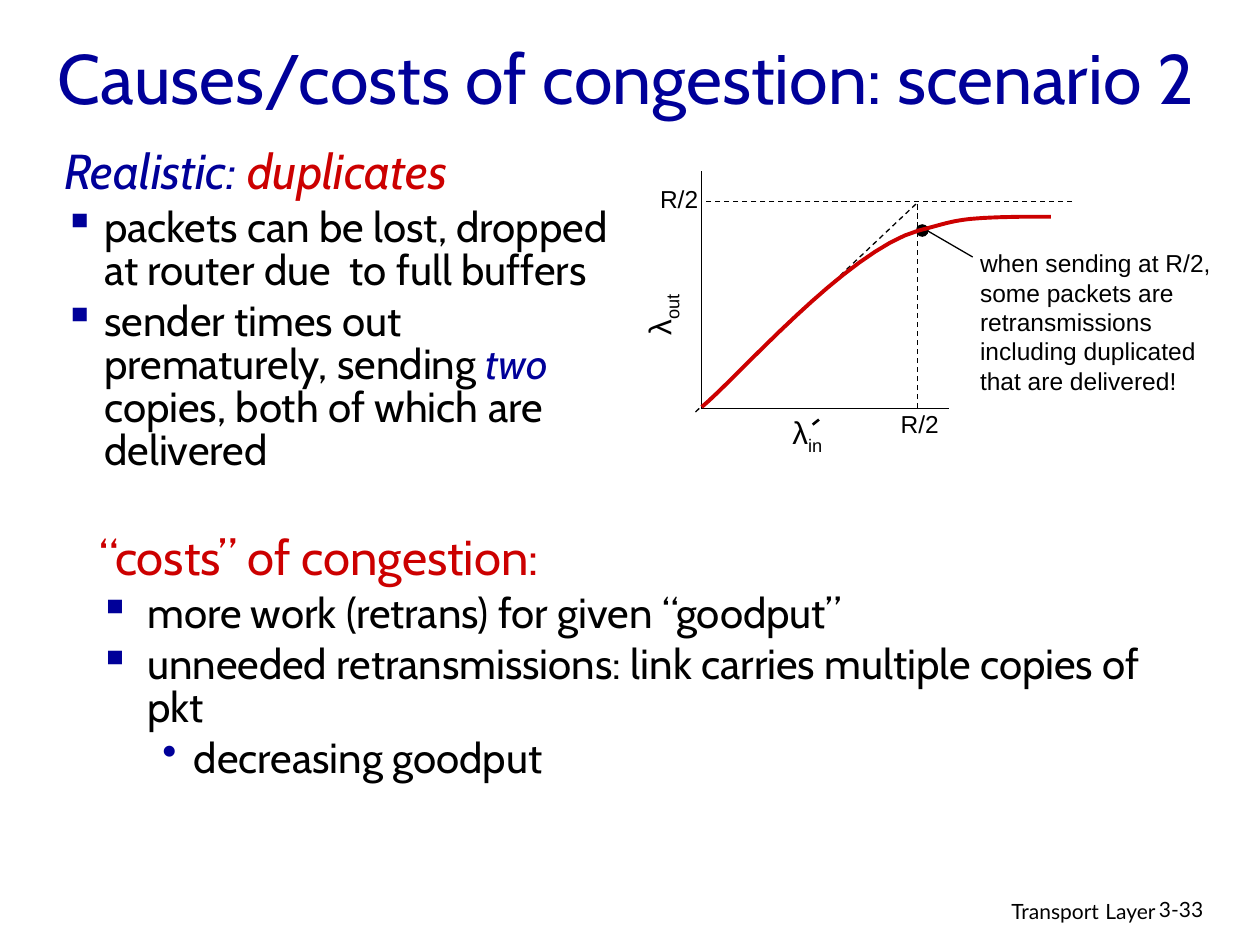
from lxml import etree
from pptx import Presentation
from pptx.dml.color import RGBColor
from pptx.enum.dml import MSO_LINE
from pptx.enum.shapes import MSO_CONNECTOR, MSO_SHAPE
from pptx.enum.text import MSO_ANCHOR, PP_ALIGN
from pptx.oxml.ns import qn
from pptx.util import Inches, Pt

BLACK = RGBColor(0x00, 0x00, 0x00)
BLUE = RGBColor(0x00, 0x00, 0x99)
RED = RGBColor(0xCC, 0x00, 0x00)
STRAIGHT = MSO_CONNECTOR.STRAIGHT
OVAL = MSO_SHAPE.OVAL
DASH = MSO_LINE.DASH
TOP, MIDDLE = MSO_ANCHOR.TOP, MSO_ANCHOR.MIDDLE
LEFT, RIGHT = PP_ALIGN.LEFT, PP_ALIGN.RIGHT

deck = Presentation()
deck.slide_width, deck.slide_height = Inches(10), Inches(7.5)
slide = deck.slides.add_slide(deck.slide_layouts[6])
shapes = slide.shapes


def write(place, paras, font="Arial", size=14, color=BLACK, align=LEFT,
          anchor=TOP, wrap=True, turn=0):
    """Add a text box. Each paragraph is (runs, format); each run is
    (text, format), where the format overrides that of the box."""
    box = shapes.add_textbox(*[Inches(v) for v in place])
    box.rotation = turn
    frame = box.text_frame
    frame.word_wrap, frame.vertical_anchor = wrap, anchor
    for i, (runs, style) in enumerate(paras):
        para = frame.add_paragraph() if i else frame.paragraphs[0]
        para.alignment = align
        for text, look in runs:
            run = para.add_run()
            run.text = text
            run.font.name = font
            run.font.size = Pt(look.get("size", size))
            run.font.color.rgb = look.get("color", color)
            run.font.italic = look.get("italic", False)
            if "base" in look:
                run.font._element.set("baseline", str(look["base"] * 1000))
        if not style:
            continue
        para.level = style.get("level", 0)
        para.line_spacing = 0.85
        para.space_before = Pt(0.2 * runs[0][1].get("size", size))
        props = para._p.get_or_add_pPr()
        margin, hang = style["indent"]
        props.set("marL", str(Inches(margin)))
        props.set("indent", str(-Inches(hang)))
        if "bullet" in style:
            tint = etree.SubElement(props, qn("a:buClr"))
            etree.SubElement(tint, qn("a:srgbClr"), val=str(BLUE))
            etree.SubElement(props, qn("a:buChar"), char=style["bullet"])


def draw(start, end, width=0.75, dash=None, arrow=False):
    line = shapes.add_connector(STRAIGHT, *[Inches(v) for v in start + end])
    line.line.color.rgb = BLACK
    line.line.width = Pt(width)
    if dash:
        line.line.dash_style = dash
    if arrow:
        etree.SubElement(line.line._get_or_add_ln(), qn("a:tailEnd"), type="triangle")
    etree.SubElement(line._element.spPr, qn("a:effectLst"))


# Title and footer
write((0.36, 0.13, 9.23, 0.95), [([("Causes/costs of congestion: scenario 2", {})], {})],
      font="Cabin", size=40, color=BLUE, anchor=MIDDLE)
write((6.1, 7.05, 3.17, 0.31),
      [([("Transport", {}), (" ", {"size": 14}), ("Layer", {})], {})],
      font="Lato", size=12, align=RIGHT)
write((9.1, 7.07, 0.74, 0.3), [([("3-33", {})], {})], font="Lato", size=12)

# Body text
head = {"indent": (0.38, 0.38)}
point = {"indent": (0.32, 0.32), "bullet": "▪"}
cost = {"indent": (0.38, 0.38), "bullet": "▪"}
sub = {"indent": (0.75, 0.25), "bullet": "•", "level": 1}
write((0.41, 1.14, 4.71, 2.1), [
    ([("Realistic: ", {"size": 28, "color": BLUE, "italic": True}),
      ("duplicates", {"size": 28, "color": RED, "italic": True}), (" ", {})], head),
    ([("packets can be lost, dropped at router due  to full buffers", {})], point),
    ([("sender times out prematurely, sending ", {}),
      ("two ", {"color": BLUE, "italic": True}),
      ("copies, both of which are delivered", {})], point),
], font="Cabin", size=24)
write((0.69, 4.2, 8.91, 1.08), [
    ([("“costs” of congestion:", {"size": 28, "color": RED})], head),
    ([("more work (retrans) for given “goodput”", {})], cost),
    ([("unneeded retransmissions: link carries multiple copies of pkt", {})], cost),
    ([("decreasing goodput", {})], sub),
], font="Cabin", size=24)

# Axes and dashed guides
draw((5.57, 1.36), (5.57, 3.24))
draw((7.53, 3.24), (5.56, 3.24))
draw((8.51, 1.6), (5.56, 1.6), dash=DASH)
draw((5.52, 3.27), (7.29, 1.6), dash=DASH)
draw((7.28, 3.24), (7.28, 1.62), dash=DASH)

# Axis labels
for place in ((5.14, 1.41, 0.5, 0.33), (7.05, 3.2, 0.5, 0.33)):
    write(place, [([("R/2", {})], {})], wrap=False)
write((4.89, 2.22, 0.68, 0.4), [([("λ", {}), ("out", {"base": -25})], {})],
      size=18, turn=270)
write((6.19, 3.23, 0.47, 0.4), [([("λ", {}), ("in", {"base": -25})], {})],
      size=18, wrap=False)
draw((6.45, 3.37), (6.5, 3.33), width=1.5)

# Marked point and its note
dot = shapes.add_shape(OVAL, Inches(7.27), Inches(1.78), Inches(0.1), Inches(0.1))
dot.shadow.inherit = False
dot.fill.solid()
dot.fill.fore_color.rgb = BLACK
dot.line.fill.background()
draw((7.72, 2.04), (7.29, 1.79), arrow=True)
write((7.68, 1.92, 2.06, 1.26),
      [([("when sending at R/2, some packets are retransmissions "
          "including duplicated that are delivered!", {})], {})])

# Throughput curve, sampled from its Bézier arcs
STEPS = 16
arcs = [
    ((5.57, 3.23), (5.85, 3), (6.72, 1.99), (7.29, 1.83)),
    ((7.29, 1.83), (7.6, 1.75), (7.58, 1.73), (8.11, 1.72)),
    ((8.11, 1.72), (8.34, 1.72), (8.29, 1.72), (8.34, 1.72)),
]
dots = []
for arc in arcs:
    for n in range(1, STEPS + 1):
        t = n / STEPS
        parts = ((1 - t) ** 3, 3 * t * (1 - t) ** 2, 3 * t * t * (1 - t), t ** 3)
        dots.append([Inches(sum(w * p[k] for w, p in zip(parts, arc))) for k in (0, 1)])
path = shapes.build_freeform(Inches(5.57), Inches(3.23))
path.add_line_segments(dots, close=False)
curve = path.convert_to_shape()
curve.shadow.inherit = False
curve.fill.background()
curve.line.color.rgb = RED
curve.line.width = Pt(2.25)

deck.save("out.pptx")
